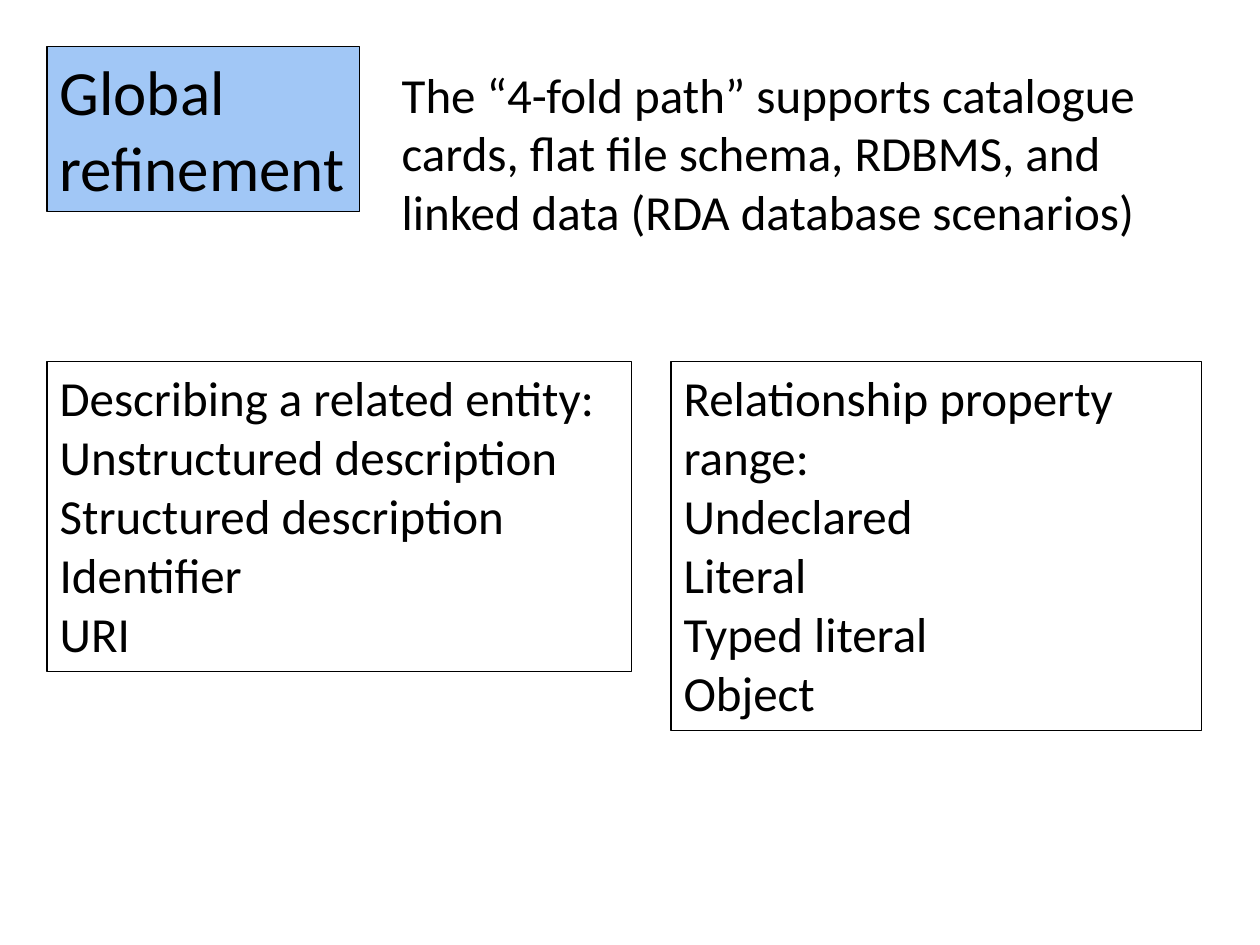
from dataclasses import dataclass

from lxml.etree import SubElement
from pptx import Presentation
from pptx.dml.color import RGBColor
from pptx.enum.text import MSO_ANCHOR, MSO_AUTO_SIZE, PP_ALIGN
from pptx.oxml.ns import qn
from pptx.util import Pt


@dataclass(frozen=True)
class Theme:
    font: str = "Calibri"
    ink: RGBColor = RGBColor(0x00, 0x00, 0x00)
    title_fill: RGBColor = RGBColor(0xA1, 0xC7, 0xF6)
    title_size: Pt = Pt(36)
    body_size: Pt = Pt(28)
    border: Pt = Pt(0.75)


THEME = Theme()
LEFT = 26.9
LIST_TOP = 206.6


def place(sp, box):
    for name, value in zip(("left", "top", "width", "height"), box):
        setattr(sp, name, Pt(value))


def outline(sp):
    sp.line.color.rgb = THEME.ink
    sp.line.width = THEME.border


def write(sp, lines, size, wrap=True):
    tf = sp.text_frame
    frame_format = {"word_wrap": wrap, "auto_size": MSO_AUTO_SIZE.NONE,
                    "vertical_anchor": MSO_ANCHOR.TOP}
    for name, value in frame_format.items():
        setattr(tf, name, value)
    for i, line in enumerate(lines):
        p = tf.paragraphs[0] if i == 0 else tf.add_paragraph()
        pPr = p._p.get_or_add_pPr()
        pPr.set("marL", "0")
        pPr.set("indent", "0")
        p.alignment = PP_ALIGN.LEFT
        p.space_before = Pt(0)
        SubElement(pPr, qn("a:buNone"))
        r = p.add_run()
        r.text = line
        font_format = {"name": THEME.font, "size": size}
        for name, value in font_format.items():
            setattr(r.font, name, value)
        r.font.color.rgb = THEME.ink


def add_title(s, box, lines):
    sp = s.shapes.title
    place(sp, box)
    sp.fill.solid()
    sp.fill.fore_color.rgb = THEME.title_fill
    outline(sp)
    write(sp, lines, THEME.title_size, wrap=False)


def add_summary(s, box, text):
    sp = s.shapes.add_textbox(*map(Pt, box))
    write(sp, [text], THEME.body_size)


def add_list(s, idx, box, lines):
    sp = s.placeholders[idx]
    place(sp, box)
    outline(sp)
    write(sp, lines, THEME.body_size)


def main():
    prs = Presentation()
    prs.slide_width, prs.slide_height = Pt(720), Pt(540)
    two_content = prs.slide_layouts[3]
    s = prs.slides.add_slide(two_content)

    add_title(s, (LEFT, 26.6, 178.6, 94.3), ["Global", "refinement"])
    add_summary(s, (222.5, 33.1, 463.7, 108.7),
                "The “4-fold path” supports catalogue cards, flat file schema, "
                "RDBMS, and linked data (RDA database scenarios)")
    add_list(s, 1, (LEFT, LIST_TOP, 334.1, 177.1), [
        "Describing a related entity:", "Unstructured description",
        "Structured description", "Identifier", "URI"])
    add_list(s, 2, (383.4, LIST_TOP, 303.1, 211), [
        "Relationship property range:", "Undeclared", "Literal",
        "Typed literal", "Object"])

    prs.save("out.pptx")


if __name__ == "__main__":
    main()
